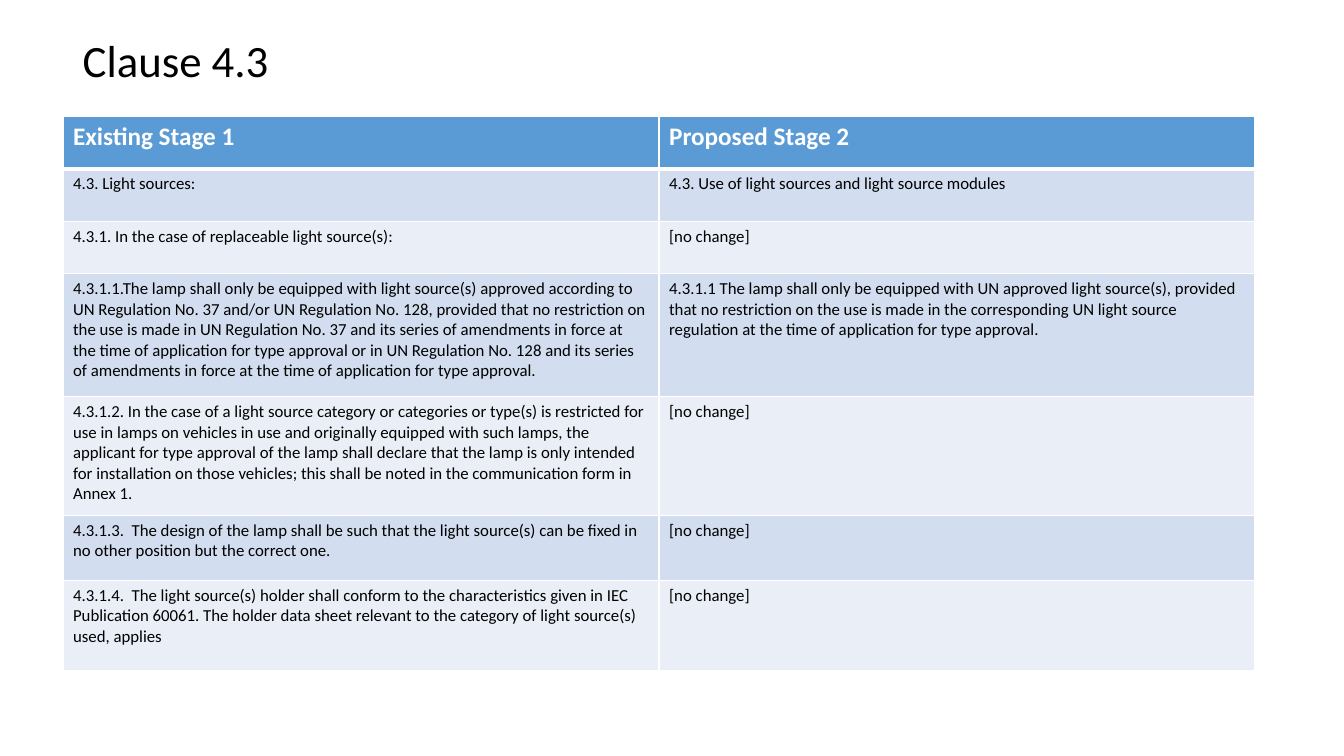
from lxml.etree import SubElement
from pptx import Presentation
from pptx.dml.color import RGBColor
from pptx.enum.text import MSO_ANCHOR
from pptx.oxml.ns import qn
from pptx.util import Pt

WHITE = RGBColor(0xFF, 0xFF, 0xFF)
BLACK = RGBColor(0x00, 0x00, 0x00)
HEADER_BLUE = RGBColor(0x5B, 0x9B, 0xD5)
BAND_DARK = RGBColor(0xD2, 0xDE, 0xEF)
BAND_LIGHT = RGBColor(0xEA, 0xEF, 0xF7)

TITLE_FORMAT = {"name": "Calibri", "size": Pt(32), "bold": False}
HEADER_FORMAT = {"name": "Calibri", "size": Pt(18), "bold": True}
BODY_FORMAT = {"name": "Calibri", "size": Pt(12), "bold": False}

NO_CHANGE = "[no change]"
CLAUSES = [
    ("Existing Stage 1", "Proposed Stage 2"),
    ("4.3. Light sources:", "4.3. Use of light sources and light source modules"),
    ("4.3.1. In the case of replaceable light source(s):", NO_CHANGE),
    ("4.3.1.1.The lamp shall only be equipped with light source(s) approved "
     "according to UN Regulation No. 37 and/or UN Regulation No. 128, provided "
     "that no restriction on the use is made in UN Regulation No. 37 and its "
     "series of amendments in force at the time of application for type approval "
     "or in UN Regulation No. 128 and its series of amendments in force at the "
     "time of application for type approval.",
     "4.3.1.1 The lamp shall only be equipped with UN approved light source(s), "
     "provided that no restriction on the use is made in the corresponding UN "
     "light source regulation at the time of application for type approval."),
    ("4.3.1.2. In the case of a light source category or categories or type(s) is "
     "restricted for use in lamps on vehicles in use and originally equipped with "
     "such lamps, the applicant for type approval of the lamp shall declare that "
     "the lamp is only intended for installation on those vehicles; this shall be "
     "noted in the communication form in Annex 1.", NO_CHANGE),
    ("4.3.1.3.  The design of the lamp shall be such that the light source(s) can "
     "be fixed in no other position but the correct one.", NO_CHANGE),
    ("4.3.1.4.  The light source(s) holder shall conform to the characteristics "
     "given in IEC Publication 60061. The holder data sheet relevant to the "
     "category of light source(s) used, applies", NO_CHANGE),
]
ROW_HEIGHTS = [37.5, 37.5, 37.5, 88, 84.75, 46.25, 64.5]


def write_text(frame, text, text_format, color):
    para = frame.paragraphs[0]
    span = para.add_run()
    span.text = text
    for name, value in text_format.items():
        setattr(span.font, name, value)
    span.font.color.rgb = color
    return para


def draw_border(cell, side, width):
    properties = cell._tc.get_or_add_tcPr()
    line = SubElement(properties, qn(f"a:ln{side}"), w=str(Pt(width)))
    fill = SubElement(line, qn("a:solidFill"))
    SubElement(fill, qn("a:srgbClr"), val=str(WHITE))


def add_title(page, text, left, top, width, height):
    box = page.shapes.add_textbox(Pt(left), Pt(top), Pt(width), Pt(height))
    frame = box.text_frame
    frame.word_wrap = True
    frame.vertical_anchor = MSO_ANCHOR.MIDDLE
    para = write_text(frame, text, TITLE_FORMAT, BLACK)
    para.line_spacing = 0.9


def add_clause_table(page, clauses, left, top, width):
    columns = len(clauses[0])
    table = page.shapes.add_table(
        len(clauses), columns, Pt(left), Pt(top), Pt(width), Pt(sum(ROW_HEIGHTS))
    ).table
    for column in table.columns:
        column.width = Pt(width / columns)
    for index, (texts, height) in enumerate(zip(clauses, ROW_HEIGHTS)):
        table.rows[index].height = Pt(height)
        is_header = index == 0
        band = BAND_DARK if index % 2 else BAND_LIGHT
        for cell, text in zip(table.rows[index].cells, texts):
            widths = {"L": 1, "R": 1, "T": 3 if index == 1 else 1, "B": 3 if is_header else 1}
            for side, border in widths.items():
                draw_border(cell, side, border)
            cell.fill.solid()
            cell.fill.fore_color.rgb = HEADER_BLUE if is_header else band
            write_text(cell.text_frame, text,
                       HEADER_FORMAT if is_header else BODY_FORMAT,
                       WHITE if is_header else BLACK)


def main():
    deck = Presentation()
    deck.slide_width, deck.slide_height = Pt(960), Pt(540)
    page = deck.slides.add_slide(deck.slide_layouts[6])
    add_clause_table(page, CLAUSES, 45, 83, 851.5)
    add_title(page, "Clause 4.3", 52, 18, 828, 53.5)
    deck.save("out.pptx")


if __name__ == "__main__":
    main()
